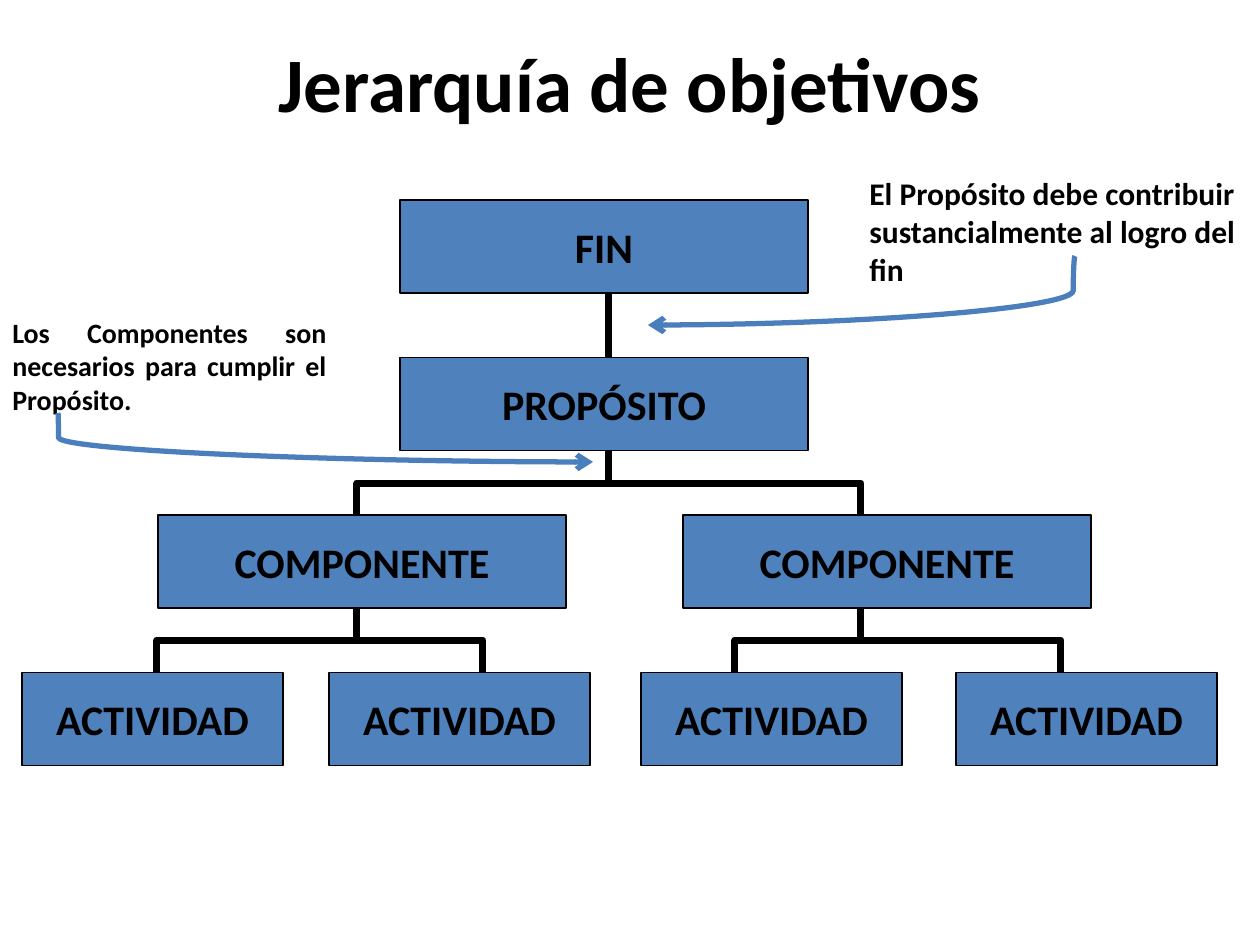
from dataclasses import dataclass

from lxml.etree import SubElement
from pptx import Presentation
from pptx.dml.color import RGBColor
from pptx.enum.shapes import MSO_CONNECTOR as Connector, MSO_SHAPE as Shape
from pptx.enum.text import MSO_ANCHOR as Anchor, PP_ALIGN as Align
from pptx.oxml.ns import qn
from pptx.util import Emu, Pt

EMU_PER_PX = 914400 / 126


@dataclass(frozen=True)
class Theme:
    font: str = "Calibri"
    text: RGBColor = RGBColor(0, 0, 0)
    box: RGBColor = RGBColor(0x4F, 0x81, 0xBD)
    arrow: RGBColor = RGBColor(0x4B, 0x7E, 0xBC)
    title_size: int = 44
    box_size: int = 24
    right_note_size: int = 18
    left_note_size: int = 16
    box_line: int = 1
    arrow_line: int = 3
    tree_line: int = 4


THEME = Theme()

TITLE = ("Jerarquía de objetivos", (0, 29, 1260, 106))

# Each level: label, box width, left edges of its boxes
LEVELS = [
    ("FIN", 408, [400]),
    ("PROPÓSITO", 408, [400]),
    ("COMPONENTE", 408, [158, 683]),
    ("ACTIVIDAD", 261, [22, 329, 641, 956]),
]
FIRST_TOP, LEVEL_PITCH, BOX_HEIGHT = 200, 157.5, 93

# One half of the tree, as distance from the centre line and y
TREE_CENTRE = 609
BRANCH = [(0, 294), (0, 483), (252, 483), (252, 640), (452, 640),
          (452, 703), (452, 640), (126, 640), (126, 714)]

# Lines, frame, size, alignment
NOTES = [
    (["El Propósito debe contribuir", "sustancialmente al logro del fin"],
     (857, 168, 403, 165), THEME.right_note_size, Align.LEFT),
    (["Los Componentes son necesarios para cumplir el Propósito."],
     (0, 309, 339, 115), THEME.left_note_size, Align.JUSTIFY),
]

# Start, end, bend position in 1/100000 of the width
ARROWS = [
    ((1075, 256), (648, 325), 400),
    ((58, 413), (593, 462), 100),
]


def px(value):
    return Emu(round(value * EMU_PER_PX))


def write_text(shape, lines, *, size, align=Align.LEFT, anchor=Anchor.TOP,
               wrap=True, space_before=0):
    frame = shape.text_frame
    frame.word_wrap = wrap
    frame.vertical_anchor = anchor
    frame.text = "\n".join(lines)
    for paragraph in frame.paragraphs:
        paragraph.alignment = align
        paragraph.space_before = Pt(space_before)
        font = paragraph.font
        font.name, font.size, font.bold = THEME.font, Pt(size), True
        font.color.rgb = THEME.text


def set_line(shape, color, width):
    shape.line.color.rgb = color
    shape.line.width = Pt(width)


def add_branch(slide, side):
    """Draw the left (side -1) or right (side 1) half of the tree."""
    points = [(TREE_CENTRE + side * offset, y) for offset, y in BRANCH]
    builder = slide.shapes.build_freeform(*points[0], scale=EMU_PER_PX)
    builder.add_line_segments(points[1:], close=False)
    branch = builder.convert_to_shape()
    branch.shadow.inherit = False
    branch.fill.background()
    set_line(branch, THEME.text, THEME.tree_line)
    SubElement(branch.line._get_or_add_ln(), qn("a:round"))


def add_box(slide, label, left, top, width):
    box = slide.shapes.add_shape(
        Shape.RECTANGLE, *map(px, (left, top, width, BOX_HEIGHT)))
    box.shadow.inherit = False
    box.fill.solid()
    box.fill.fore_color.rgb = THEME.box
    set_line(box, THEME.text, THEME.box_line)
    write_text(box, [label], size=THEME.box_size, align=Align.CENTER,
               anchor=Anchor.MIDDLE, wrap=False)


def add_arrow(slide, start, end, bend):
    arrow = slide.shapes.add_connector(
        Connector.CURVE, *map(px, (*start, *end)))
    set_line(arrow, THEME.arrow, THEME.arrow_line)
    properties = arrow._element.spPr
    SubElement(properties.find(qn("a:ln")), qn("a:tailEnd"), type="arrow")
    SubElement(properties, qn("a:effectLst"))
    adjustments = properties.find(qn("a:prstGeom")).find(qn("a:avLst"))
    SubElement(adjustments, qn("a:gd"), name="adj1", fmla=f"val {bend}")


def main():
    presentation = Presentation()
    presentation.slide_width, presentation.slide_height = px(1260), px(945)
    slide = presentation.slides.add_slide(presentation.slide_layouts[6])

    for side in (-1, 1):
        add_branch(slide, side)
    for level, (label, width, lefts) in enumerate(LEVELS):
        for left in lefts:
            add_box(slide, label, left, FIRST_TOP + level * LEVEL_PITCH, width)

    title, frame = TITLE
    write_text(slide.shapes.add_textbox(*map(px, frame)), [title],
               size=THEME.title_size, align=Align.CENTER,
               anchor=Anchor.MIDDLE, space_before=9)
    for lines, frame, size, align in NOTES:
        write_text(slide.shapes.add_textbox(*map(px, frame)), lines,
                   size=size, align=align)
    for start, end, bend in ARROWS:
        add_arrow(slide, start, end, bend)

    presentation.save("out.pptx")


if __name__ == "__main__":
    main()
